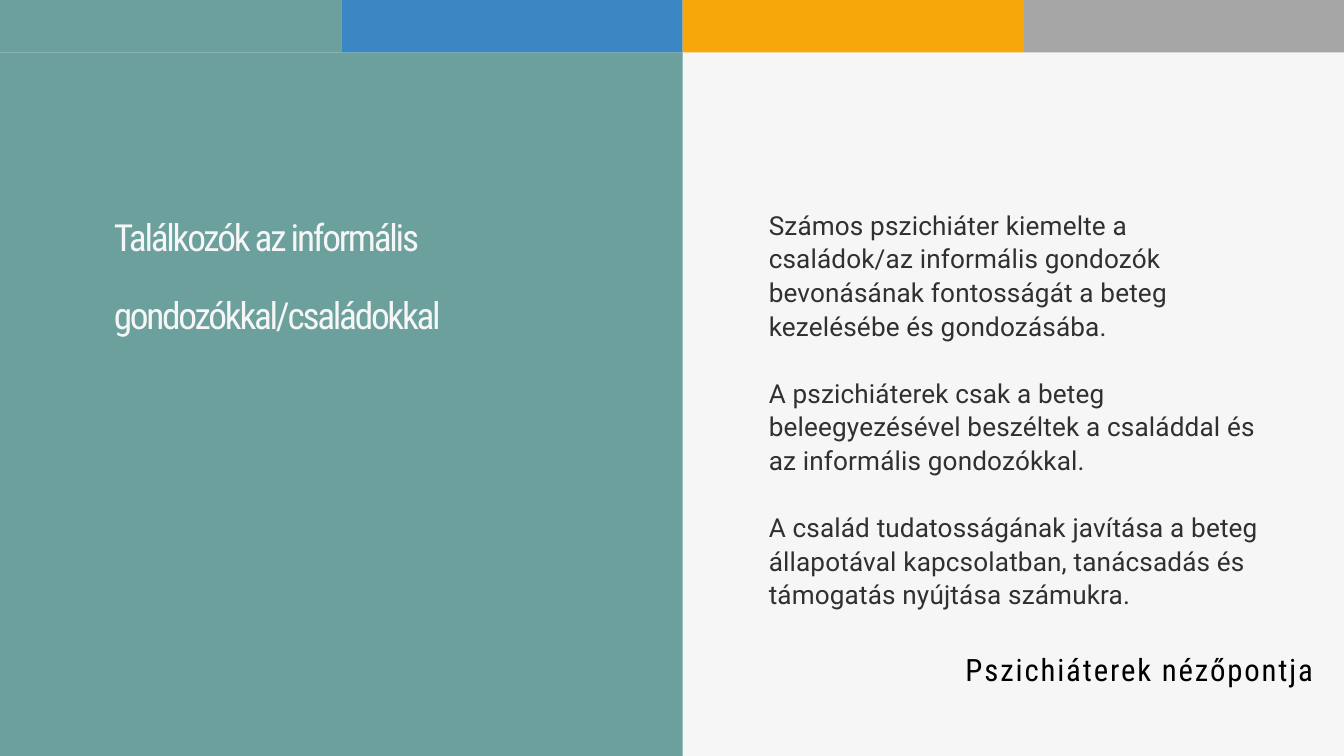
from dataclasses import dataclass
from pptx import Presentation
from pptx.dml.color import RGBColor as Rgb
from pptx.enum.shapes import MSO_SHAPE as Shape
from pptx.enum.text import PP_ALIGN as Align
from pptx.util import Inches, Pt


@dataclass(frozen=True)
class Style:
    font: str
    size: float
    color: str
    lead: float
    track: float
    gap: float = 0
    align: Align = Align.LEFT


@dataclass(frozen=True)
class Theme:
    paper: str = "F6F6F6"
    teal: str = "6CA09D"
    blue: str = "3B87C3"
    amber: str = "F7A70A"
    gray: str = "A6A6A6"
    title: Style = Style("Roboto Condensed", 40, "F6F6F6", 83.2, -2.4)
    body: Style = Style("Roboto", 28, "303030", 36, 0.2, gap=36)
    label: Style = Style("Roboto Condensed", 33, "000000", 46.2, 2, align=Align.RIGHT)


THEME = Theme()
WIDE, HIGH = 20, 11.25
COL, BAND = 5.08, 0.78
HALF = 2 * COL

TITLE = "Találkozók az informális gondozókkal/családokkal"
BODY = [
    "Számos pszichiáter kiemelte a családok/az informális gondozók "
    "bevonásának fontosságát a beteg kezelésébe és gondozásába.",
    "A pszichiáterek csak a beteg beleegyezésével beszéltek a családdal "
    "és az informális gondozókkal.",
    "A család tudatosságának javítása a beteg állapotával kapcsolatban, "
    "tanácsadás és támogatás nyújtása számukra.",
]
LABEL = "Pszichiáterek nézőpontja"


def block(slide, box, color):
    rect = slide.shapes.add_shape(Shape.RECTANGLE, *map(Inches, box))
    rect.shadow.inherit = False
    rect.fill.solid()
    rect.fill.fore_color.rgb = Rgb.from_string(color)
    rect.line.fill.background()


def write(slide, box, lines, style):
    frame = slide.shapes.add_textbox(*map(Inches, box)).text_frame
    frame.word_wrap = True
    frame.margin_left = frame.margin_right = 0
    frame.margin_top = frame.margin_bottom = 0
    frame.text = "\n".join(lines)
    for i, para in enumerate(frame.paragraphs):
        para.alignment = style.align
        para.line_spacing = Pt(style.lead)
        para.space_before = Pt(style.gap if i else 0)
        for run in para.runs:
            run.font.name = style.font
            run.font.size = Pt(style.size)
            run.font.color.rgb = Rgb.from_string(style.color)
            run.font._element.set("spc", str(round(style.track * 100)))


def left_side(slide, box):
    x, y, w, h = box
    block(slide, box, THEME.teal)
    write(slide, (x + w / 6, y + 1.92, w * 0.72, 2.18), [TITLE], THEME.title)


def top_band(slide, box):
    x, y, w, h = box
    colors = [THEME.teal, THEME.blue, THEME.amber, THEME.gray]
    step = w / len(colors)
    for i, color in enumerate(colors):
        block(slide, (x + i * step, y, step, h), color)


def right_side(slide, box):
    x, y, w, h = box
    write(slide, (x + 1.28, y + 2.3, 7.45, 6.54), BODY, THEME.body)
    write(slide, (x + 1.34, y + 8.81, 8.05, 1.25), [LABEL], THEME.label)


def main():
    deck = Presentation()
    deck.slide_width, deck.slide_height = Inches(WIDE), Inches(HIGH)
    slide = deck.slides.add_slide(deck.slide_layouts[6])
    fill = slide.background.fill
    fill.solid()
    fill.fore_color.rgb = Rgb.from_string(THEME.paper)
    left_side(slide, (0, BAND, HALF, HIGH - BAND))
    top_band(slide, (0, 0, 4 * COL, BAND))
    right_side(slide, (HALF, BAND, WIDE - HALF, HIGH - BAND))
    deck.save("out.pptx")


if __name__ == "__main__":
    main()
